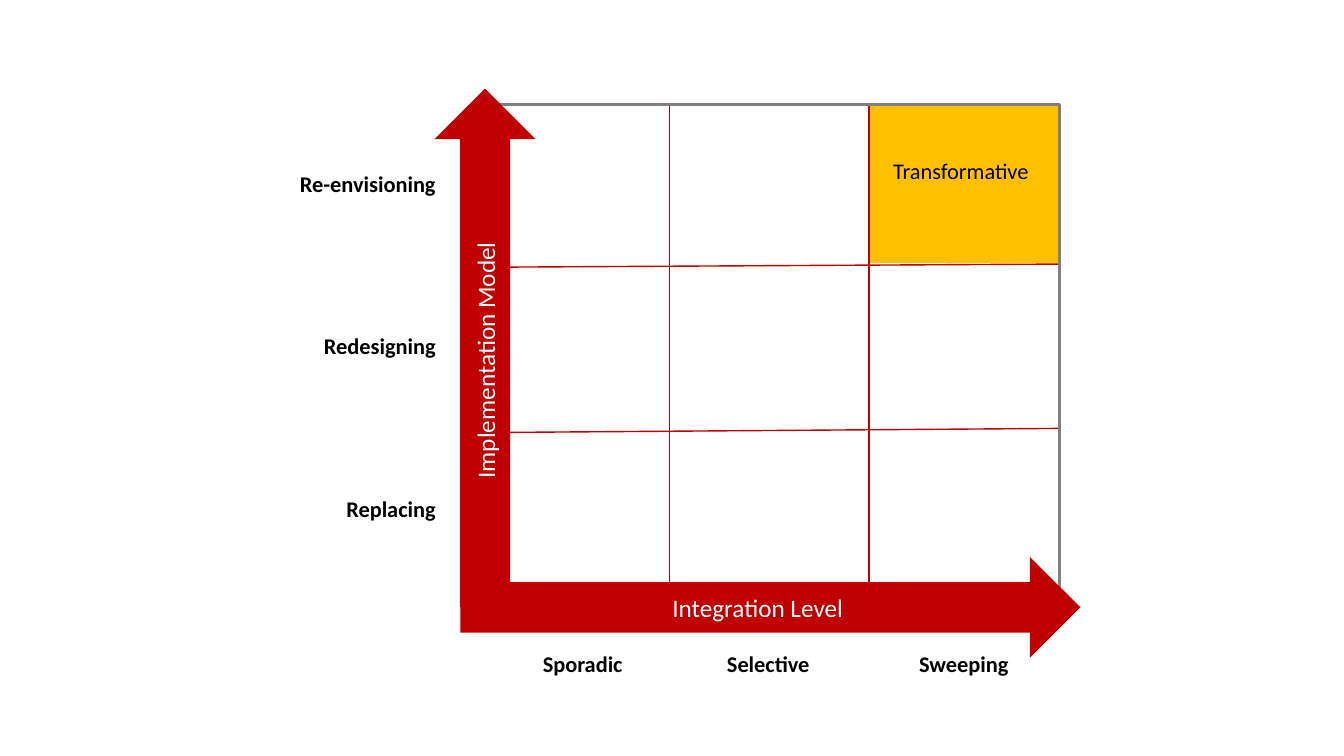
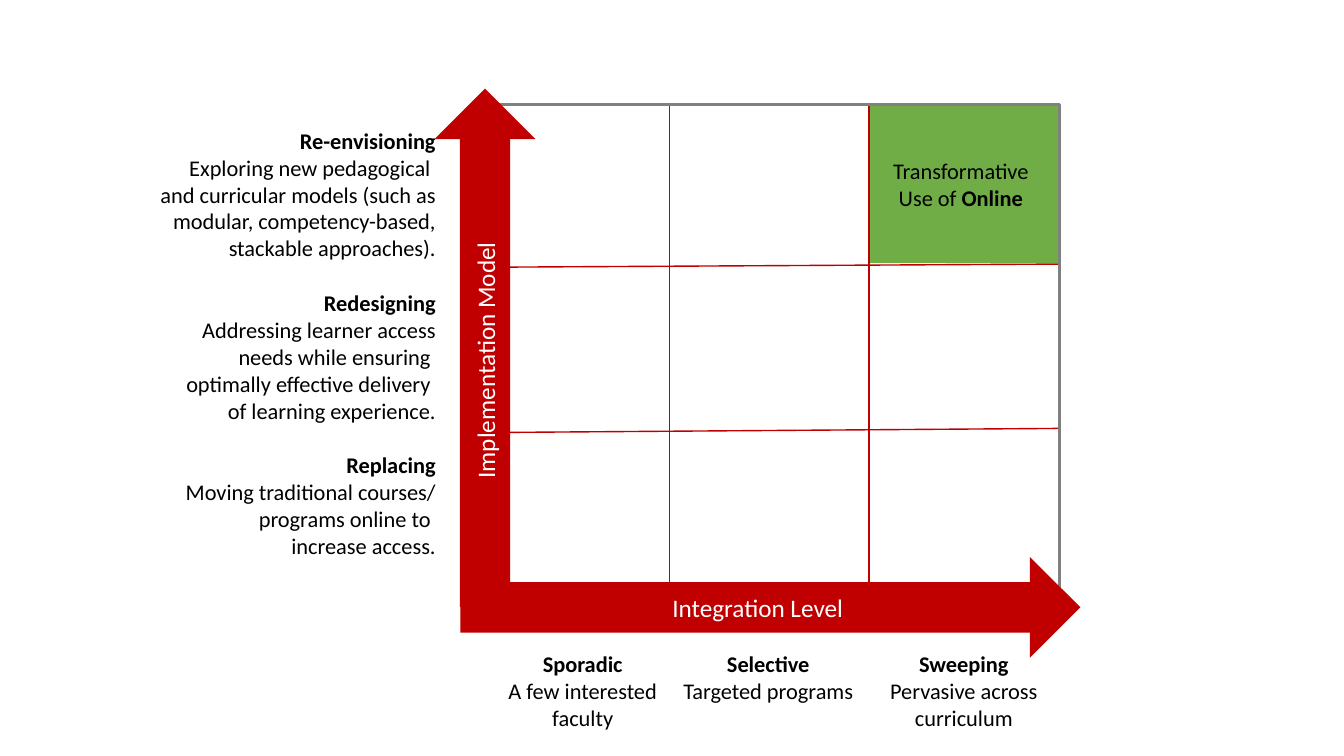
from dataclasses import dataclass

from lxml.etree import SubElement
from pptx import Presentation
from pptx.dml.color import RGBColor
from pptx.enum.shapes import MSO_CONNECTOR as Connector, MSO_SHAPE as Shape
from pptx.enum.text import MSO_ANCHOR as Anchor, MSO_AUTO_SIZE as AutoSize, PP_ALIGN as Align
from pptx.oxml.ns import qn
from pptx.shapes.autoshape import Shape as AutoShape
from pptx.slide import Slide
from pptx.text.text import _Paragraph as Paragraph
from pptx.util import Inches, Pt


@dataclass(frozen=True)
class Theme:
    font: str = "Calibri"
    label_size: int = 16
    axis_size: int = 18
    red: RGBColor = RGBColor(0xC0, 0x00, 0x00)
    amber: RGBColor = RGBColor(0xFF, 0xC0, 0x00)
    green: RGBColor = RGBColor(0x70, 0xAD, 0x47)
    grey: RGBColor = RGBColor(0x80, 0x80, 0x80)
    black: RGBColor = RGBColor(0x00, 0x00, 0x00)
    white: RGBColor = RGBColor(0xFF, 0xFF, 0xFF)


@dataclass(frozen=True)
class Box:
    left: float
    top: float
    width: float
    height: float


@dataclass(frozen=True)
class Words:
    text: str
    bold: bool = False


@dataclass(frozen=True)
class Level:
    """A step on an axis; lines counts all its rows of text once wrapped."""
    name: str
    detail: str = ""
    lines: int = 1


@dataclass(frozen=True)
class Axis:
    title: str
    box: Box
    rotation: int


@dataclass(frozen=True)
class Divider:
    start: tuple[float, float]
    end: tuple[float, float]


@dataclass(frozen=True)
class Matrix:
    goal_color: RGBColor
    goal: list[Words]
    goal_lines: int
    models_top: float
    models: list[Level]
    integration: list[Level]


THEME = Theme()
FRAME = Box(4.78, 1.04, 5.73, 5)
GOAL_CELL = Box(8.62, 1.04, 1.88, 1.57)
MODEL_LEFT, MODEL_WIDTH, MODEL_PITCH = 1.47, 2.95, 1.61
INTEGRATION_TOP = 6.4
INTEGRATION_COLUMNS = [(4.78, 2), (6.54, 2.16), (8.48, 2.16)]
LINE_HEIGHT, BOX_PADDING = 0.27, 0.1

DIVIDERS = [
    Divider((10.51, 2.62), (5.02, 2.65)),
    Divider((10.5, 4.25), (5.02, 4.29)),
    Divider((6.64, 1.04), (6.64, 5.84)),
    Divider((8.62, 1.03), (8.62, 5.82)),
]
AXES = [
    Axis("Implementation Model", Box(4.31, 0.88, 1, 5.14), 180),
    Axis("Integration Level", Box(7.14, 2.95, 1, 6.15), 270),
]
MATRICES = [
    Matrix(
        THEME.amber, [Words("Transformative")], 1, 1.64,
        [Level("Re-envisioning"), Level("Redesigning"), Level("Replacing")],
        [Level("Sporadic"), Level("Selective"), Level("Sweeping")],
    ),
    Matrix(
        THEME.green, [Words("Transformative Use of "), Words("Online", True)], 2, 1.21,
        [
            Level("Re-envisioning", "Exploring new pedagogical \nand curricular models (such as "
                  "modular, competency-based, stackable approaches).", 5),
            Level("Redesigning", "Addressing learner access needs while ensuring \n"
                  "optimally effective delivery \nof learning experience.", 5),
            Level("Replacing", "Moving traditional courses/\nprograms online to \n"
                  "increase access.", 4),
        ],
        [
            Level("Sporadic", "A few interested faculty", 3),
            Level("Selective", "Targeted programs", 2),
            Level("Sweeping", "Pervasive across curriculum", 3),
        ],
    ),
]


def add_words(paragraph: Paragraph, words: Words, size: int, color: RGBColor) -> None:
    """Add the words as runs, with a line break at each newline."""
    for index, line in enumerate(words.text.split("\n")):
        if index:
            paragraph.add_line_break()
        run = paragraph.add_run()
        run.text = line
        run.font.name = THEME.font
        run.font.size = Pt(size)
        run.font.bold = words.bold
        run.font.color.rgb = color


def add_shape(slide: Slide, kind: Shape, box: Box) -> AutoShape:
    """Add a preset shape without fill, line or shadow."""
    shape = slide.shapes.add_shape(kind, Inches(box.left), Inches(box.top),
                                   Inches(box.width), Inches(box.height))
    shape.shadow.inherit = False
    shape.fill.background()
    shape.line.fill.background()
    return shape


def fill_shape(shape: AutoShape, color: RGBColor) -> None:
    shape.fill.solid()
    shape.fill.fore_color.rgb = color


def add_label(slide: Slide, left: float, top: float, width: float, lines: int,
              paragraphs: list[list[Words]], align: Align) -> None:
    height = BOX_PADDING + lines * LINE_HEIGHT
    frame = slide.shapes.add_textbox(Inches(left), Inches(top),
                                     Inches(width), Inches(height)).text_frame
    frame.word_wrap = True
    frame.auto_size = AutoSize.SHAPE_TO_FIT_TEXT
    for index, runs in enumerate(paragraphs):
        paragraph = frame.add_paragraph() if index else frame.paragraphs[0]
        paragraph.alignment = align
        for words in runs:
            add_words(paragraph, words, THEME.label_size, THEME.black)


def add_level(slide: Slide, level: Level, left: float, top: float,
              width: float, align: Align) -> None:
    paragraphs = [[Words(level.name, True)]]
    if level.detail:
        paragraphs.append([Words(level.detail)])
    add_label(slide, left, top, width, level.lines, paragraphs, align)


def add_divider(slide: Slide, divider: Divider) -> None:
    line = slide.shapes.add_connector(
        Connector.STRAIGHT, *(Inches(value) for value in divider.start + divider.end))
    line.line.color.rgb = THEME.red
    line.line.width = Pt(1)
    SubElement(line._element.spPr, qn("a:effectLst"))


def add_axis(slide: Slide, axis: Axis) -> None:
    arrow = add_shape(slide, Shape.DOWN_ARROW, axis.box)
    arrow.rotation = axis.rotation
    fill_shape(arrow, THEME.red)
    frame = arrow.text_frame
    frame.vertical_anchor = Anchor.MIDDLE
    frame._txBody.bodyPr.set("vert", "vert")
    title = frame.paragraphs[0]
    title.alignment = Align.CENTER
    add_words(title, Words(axis.title), THEME.axis_size, THEME.white)


def draw_matrix(slide: Slide, matrix: Matrix) -> None:
    fill_shape(add_shape(slide, Shape.RECTANGLE, GOAL_CELL), matrix.goal_color)
    for level, (left, width) in zip(matrix.integration, INTEGRATION_COLUMNS):
        add_level(slide, level, left, INTEGRATION_TOP, width, Align.CENTER)
    for row, level in enumerate(matrix.models):
        add_level(slide, level, MODEL_LEFT, matrix.models_top + row * MODEL_PITCH,
                  MODEL_WIDTH, Align.RIGHT)
    add_label(slide, 8.6, 1.51, 1.86, matrix.goal_lines, [matrix.goal], Align.CENTER)
    for divider in DIVIDERS:
        add_divider(slide, divider)
    border = add_shape(slide, Shape.RECTANGLE, FRAME).line
    border.color.rgb = THEME.grey
    border.width = Pt(2.25)
    for axis in AXES:
        add_axis(slide, axis)


def main() -> None:
    deck = Presentation()
    deck.slide_width, deck.slide_height = Inches(13.33), Inches(7.5)
    blank = deck.slide_layouts[6]
    for matrix in MATRICES:
        draw_matrix(deck.slides.add_slide(blank), matrix)
    deck.save("out.pptx")


if __name__ == "__main__":
    main()
